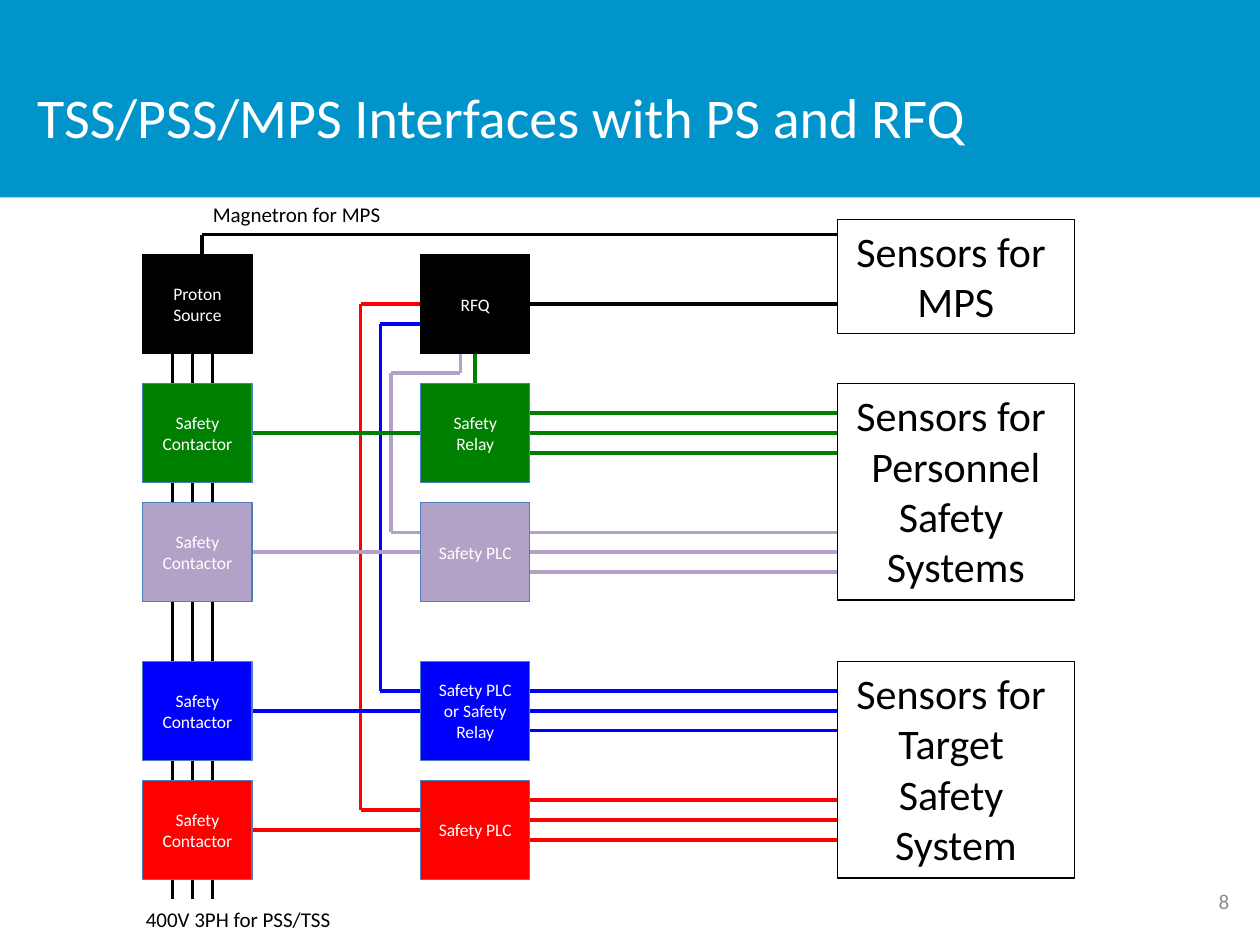
from pptx import Presentation
from pptx.dml.color import RGBColor as RGB
from pptx.enum.shapes import MSO_CONNECTOR as Link, MSO_SHAPE as Preset
from pptx.enum.text import MSO_ANCHOR as Anchor, PP_ALIGN as Align
from pptx.oxml.ns import qn
from pptx.util import Cm, Pt
from lxml.etree import SubElement

BLACK = RGB(0x00, 0x00, 0x00)
WHITE = RGB(0xFF, 0xFF, 0xFF)
GREEN = RGB(0x00, 0x80, 0x00)
LILAC = RGB(0xB3, 0xA2, 0xC7)
BLUE = RGB(0x00, 0x00, 0xFF)
RED = RGB(0xFF, 0x00, 0x00)
BANNER = RGB(0x00, 0x94, 0xCA)
OUTLINE = RGB(0x4B, 0x7E, 0xBC)
GREY = RGB(0x8C, 0x8C, 0x8C)

# Diagram grid, in centimetres
BOX_W, BOX_H = 2.2, 2.0
SOURCE_X, RFQ_X, SENSOR_X, SENSOR_W = 2.88, 8.48, 16.88, 4.78
TOP_Y, GREEN_Y, LILAC_Y, BLUE_Y, RED_Y = 5.13, 7.73, 10.13, 13.33, 15.73
PITCH = 0.4


def write(shape, lines, size, color, align, anchor, wrap=True):
    frame = shape.text_frame
    frame_format = {"word_wrap": wrap, "vertical_anchor": anchor}
    for key, value in frame_format.items():
        setattr(frame, key, value)
    frame.text = "\n".join(lines)
    font_format = {"name": "Calibri", "size": Pt(size)}
    for paragraph in frame.paragraphs:
        paragraph.alignment = align
        for run in paragraph.runs:
            for key, value in font_format.items():
                setattr(run.font, key, value)
            run.font.color.rgb = color


def add_label(slide, at, text, size, color=BLACK, align=Align.LEFT,
              anchor=Anchor.TOP, wrap=False):
    label = slide.shapes.add_textbox(*map(Cm, at))
    write(label, [text], size, color, align, anchor, wrap)


def add_block(slide, at, fill=None, outline=None):
    block = slide.shapes.add_shape(Preset.RECTANGLE, *map(Cm, at))
    block.shadow.inherit = False
    if fill is None:
        block.fill.background()
    else:
        block.fill.solid()
        block.fill.fore_color.rgb = fill
    if outline is None:
        block.line.fill.background()
    else:
        block.line.color.rgb = outline
        block.line.width = Pt(0.75)
    return block


def add_device(slide, x, y, text, fill):
    outline = BLACK if fill == BLACK else OUTLINE
    device = add_block(slide, (x, y, BOX_W, BOX_H), fill, outline)
    write(device, [text], 10, WHITE, Align.CENTER, Anchor.MIDDLE)


def add_sensors(slide, y, height, lines):
    sensors = add_block(slide, (SENSOR_X, y, SENSOR_W, height), None, BLACK)
    write(sensors, lines, 24, BLACK, Align.CENTER, Anchor.TOP)


def add_route(slide, color, *points):
    """Join successive points with straight wires."""
    for start, end in zip(points, points[1:]):
        wire = slide.shapes.add_connector(Link.STRAIGHT, *map(Cm, start + end))
        wire.line.color.rgb = color
        wire.line.width = Pt(2)
        SubElement(wire._element.spPr, qn("a:effectLst"))


def add_power_lines(slide):
    spans = [(6.53, 10.72), (10.72, BLUE_Y), (14.13, RED_Y), (17.33, 18.13)]
    for phase in range(3):
        x = 3.48 + phase * PITCH
        for top, bottom in spans:
            add_route(slide, BLACK, (x, top), (x, bottom))


def add_safety_row(slide, y, color, device, sensor_offset):
    """Contactor, controller, the wire between them and three sensor wires."""
    middle = y + BOX_H / 2
    add_route(slide, color, (SOURCE_X + BOX_W, middle), (RFQ_X, middle))
    for step in (-1, 0, 1):
        wire_y = middle + sensor_offset + step * PITCH
        add_route(slide, color, (RFQ_X + BOX_W, wire_y), (SENSOR_X, wire_y))
    add_device(slide, SOURCE_X, y, "Safety Contactor", color)
    add_device(slide, RFQ_X, y, device, color)


def add_rfq_routes(slide):
    rfq_mid, rfq_bottom = TOP_Y + BOX_H / 2, TOP_Y + BOX_H
    add_route(slide, BLUE, (RFQ_X, 6.53), (7.67, 6.53), (7.67, 13.93), (RFQ_X, 13.93))
    add_route(slide, RED, (RFQ_X, rfq_mid), (7.27, rfq_mid), (7.27, 16.33), (RFQ_X, 16.33))
    add_route(slide, GREEN, (9.58, rfq_bottom), (9.58, GREEN_Y))
    add_route(slide, LILAC, (9.28, rfq_bottom), (9.28, 7.52), (7.88, 7.52),
              (7.88, 10.73), (RFQ_X, 10.73))
    add_route(slide, BLACK, (RFQ_X + BOX_W, rfq_mid), (SENSOR_X, rfq_mid))
    # Magnetron signal
    add_route(slide, BLACK, (SENSOR_X, 4.73), (4.07, 4.73), (4.07, TOP_Y))


def main():
    deck = Presentation()
    deck.slide_width, deck.slide_height = Cm(25.4), Cm(19.05)
    slide = deck.slides.add_slide(deck.slide_layouts[6])

    # Banner, title and page number
    add_block(slide, (0, 0, 25.4, 3.98), BANNER)
    add_label(slide, (0.5, 0.75, 23.2, 3.18), "TSS/PSS/MPS Interfaces with PS and RFQ",
              32, WHITE, anchor=Anchor.MIDDLE, wrap=True)
    add_label(slide, (19.1, 17.66, 5.93, 1.01), "8", 12, GREY, Align.RIGHT,
              Anchor.MIDDLE, wrap=True)

    # Sensor groups
    add_sensors(slide, 4.42, 2.31, ["Sensors for ", "MPS"])
    add_sensors(slide, GREEN_Y, 4.37, ["Sensors for ", "Personnel", "Safety ", "Systems"])
    add_sensors(slide, BLUE_Y, 4.37, ["Sensors for ", "Target ", "Safety ", "System"])

    # Wires and devices
    add_power_lines(slide)
    add_rfq_routes(slide)
    add_device(slide, SOURCE_X, TOP_Y, "Proton Source", BLACK)
    add_device(slide, RFQ_X, TOP_Y, "RFQ", BLACK)
    rows = [
        (GREEN_Y, GREEN, "Safety Relay", 0),
        (LILAC_Y, LILAC, "Safety PLC", 0),
        (BLUE_Y, BLUE, "Safety PLC or Safety Relay", 0),
        (RED_Y, RED, "Safety PLC", -0.2),
    ]
    for row in rows:
        add_safety_row(slide, *row)

    # Supply and signal labels
    add_label(slide, (4.04, 3.94, 3.94, 0.76), "Magnetron for MPS", 12)
    add_label(slide, (2.69, 18.16, 4.29, 0.76), "400V 3PH for PSS/TSS", 12)

    deck.save("out.pptx")


if __name__ == "__main__":
    main()
